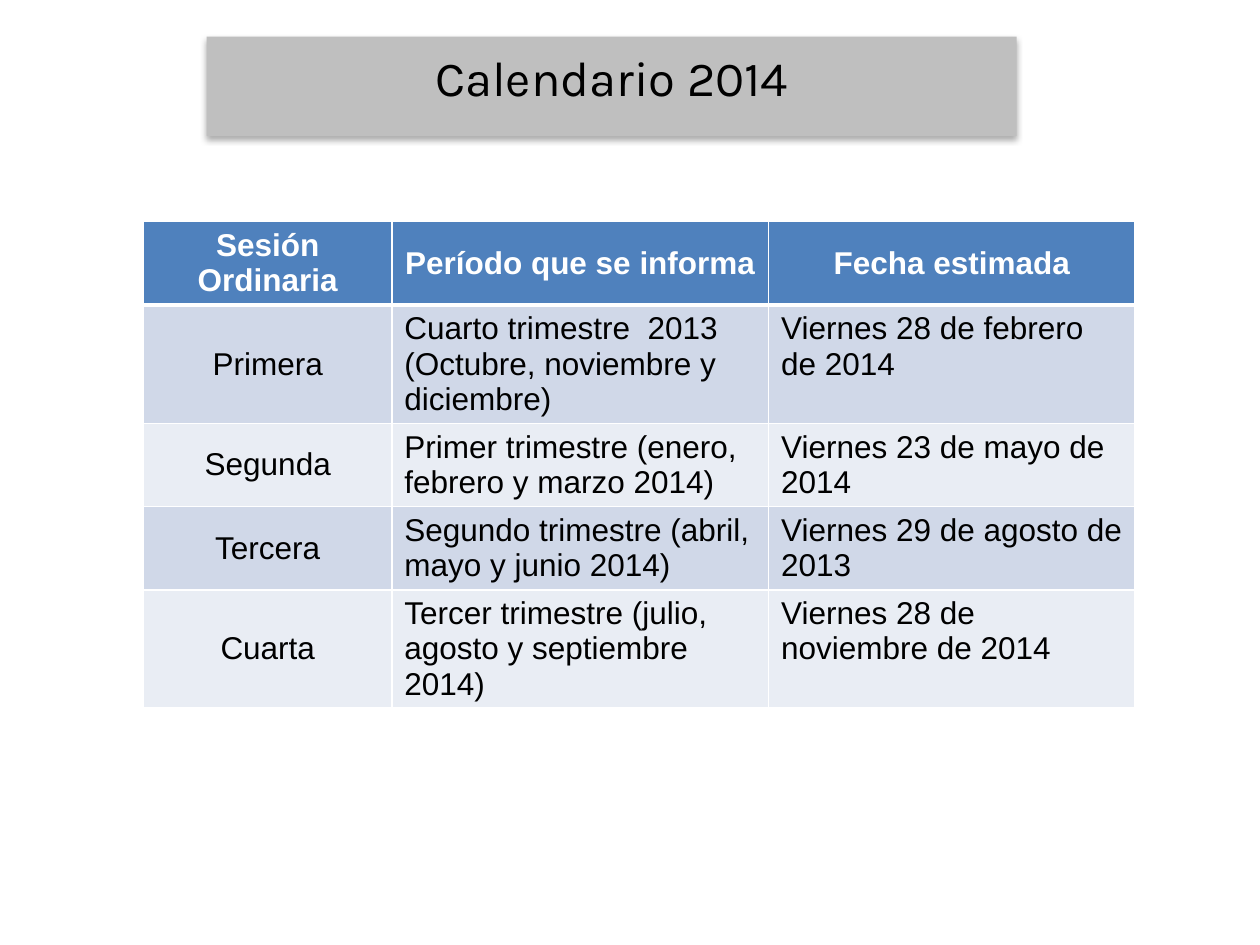
from lxml import etree
from pptx import Presentation
from pptx import util as u
from pptx.dml.color import RGBColor
from pptx.enum import shapes, text
from pptx.oxml import ns

WIDE, HIGH = u.Inches(10), u.Inches(7.5)
BLACK = RGBColor(0x00, 0x00, 0x00)
WHITE = RGBColor(0xFF, 0xFF, 0xFF)
GREY = RGBColor(0xBF, 0xBF, 0xBF)
BLUE = RGBColor(0x4F, 0x81, 0xBD)
BANDS = [RGBColor(0xE9, 0xED, 0xF4), RGBColor(0xD0, 0xD8, 0xE8)]

COLS = [1.97, 2.99, 2.91]
ROW = 0.51
ROWS = [
    ("Sesión Ordinaria", "Período que se informa", "Fecha estimada"),
    ("Primera", "Cuarto trimestre  2013 (Octubre, noviembre y diciembre)",
     "Viernes 28 de febrero de 2014"),
    ("Segunda", "Primer trimestre (enero, febrero y marzo 2014)",
     "Viernes 23 de mayo de 2014"),
    ("Tercera", "Segundo trimestre (abril, mayo y junio 2014)",
     "Viernes 29 de agosto de 2013"),
    ("Cuarta", "Tercer trimestre (julio, agosto y septiembre 2014)",
     "Viernes 28 de noviembre de 2014"),
]


def add(node, tag, **attrs):
    return etree.SubElement(node, ns.qn(tag), {k: str(v) for k, v in attrs.items()})


def style(para, font, size, color, bold=False):
    for run in para.runs:
        run.font.name = font
        run.font.size = u.Pt(size)
        run.font.bold = bold
        run.font.color.rgb = color


def cast(shape):
    """Soft shadow falling straight down."""
    shape.shadow.inherit = False
    fx = shape._element.spPr.find(ns.qn("a:effectLst"))
    drop = add(fx, "a:outerShdw", blurRad=u.Pt(3.5), dist=u.Pt(2.2),
               dir=90 * 60000, rotWithShape=0)
    tint = add(drop, "a:srgbClr", val=BLACK)
    add(tint, "a:alpha", val=32000)


def edge(cell, base):
    """White cell borders; base is the width of the lower one."""
    props = cell._tc.get_or_add_tcPr()
    for side, width in zip("LRTB", (1, 1, 1, base)):
        line = add(props, f"a:ln{side}", w=u.Pt(width))
        add(add(line, "a:solidFill"), "a:srgbClr", val=WHITE)


def add_title(slide):
    box = slide.shapes.add_shape(
        shapes.MSO_SHAPE.RECTANGLE, u.Inches(1.64), u.Inches(0.29),
        u.Inches(6.43), u.Inches(0.79))
    box.fill.solid()
    box.fill.fore_color.rgb = GREY
    box.line.fill.background()
    cast(box)
    frame = box.text_frame
    frame.text = "Calendario 2014"
    frame.word_wrap = True
    frame.vertical_anchor = text.MSO_ANCHOR.MIDDLE
    para = frame.paragraphs[0]
    para.alignment = text.PP_ALIGN.CENTER
    para.line_spacing = u.Pt(23)
    style(para, "Karla", 28, BLACK)


def fill_cell(cell, words, row, col):
    head = row == 0
    mid = head or col == 0
    edge(cell, 3 if head else 1)
    cell.fill.solid()
    cell.fill.fore_color.rgb = BLUE if head else BANDS[row % 2]
    cell.text = words
    cell.vertical_anchor = text.MSO_ANCHOR.MIDDLE if mid else text.MSO_ANCHOR.TOP
    para = cell.text_frame.paragraphs[0]
    para.alignment = text.PP_ALIGN.CENTER if mid else text.PP_ALIGN.LEFT
    style(para, "Arial", 18, WHITE if head else BLACK, head)


def add_dates(slide):
    table = slide.shapes.add_table(
        len(ROWS), len(COLS), u.Inches(1.14), u.Inches(1.76),
        u.Inches(sum(COLS)), u.Inches(ROW * len(ROWS))).table
    for col, width in zip(table.columns, COLS):
        col.width = u.Inches(width)
    for r, line in enumerate(ROWS):
        for c, words in enumerate(line):
            fill_cell(table.cell(r, c), words, r, c)


def main():
    deck = Presentation()
    deck.slide_width, deck.slide_height = WIDE, HIGH
    slide = deck.slides.add_slide(deck.slide_layouts[6])
    # Heading
    add_title(slide)
    # Calendar of sessions
    add_dates(slide)
    deck.save("out.pptx")


if __name__ == "__main__":
    main()
